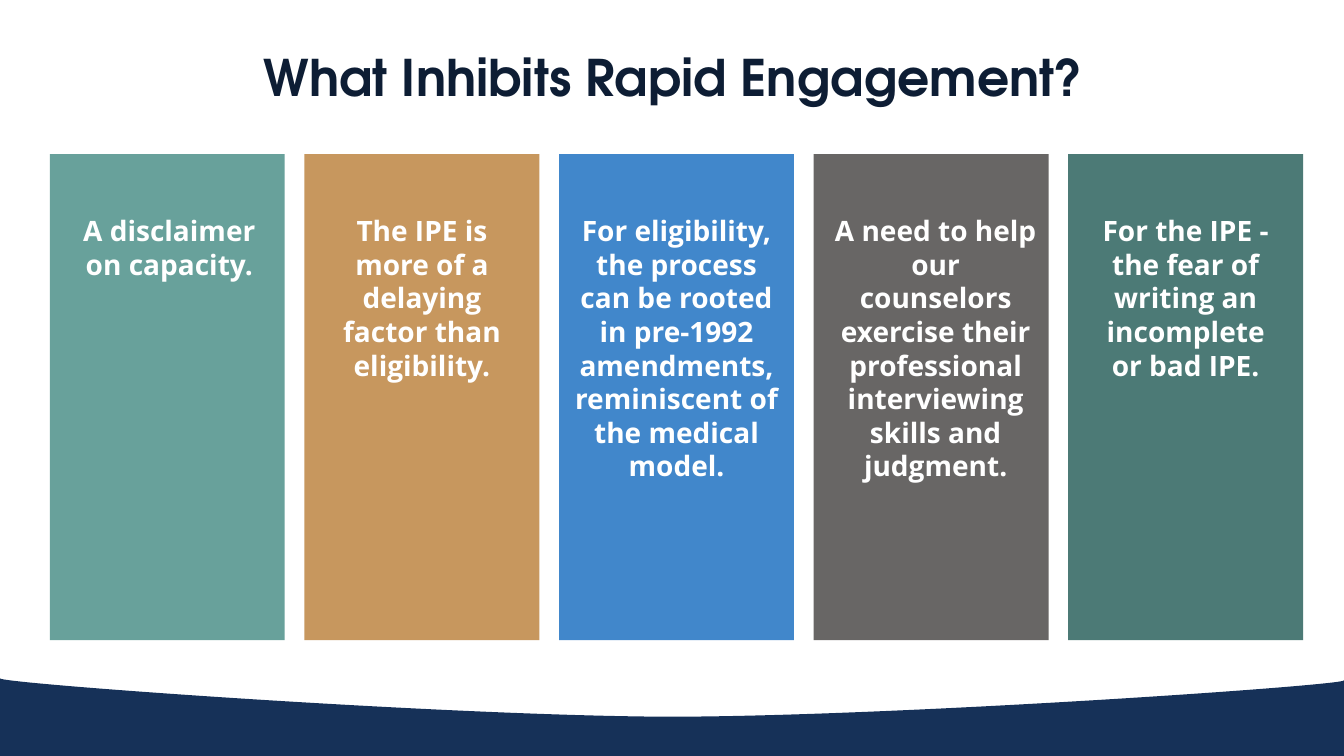
import pptx
import pptx.util
import pptx.dml.color
import pptx.enum.shapes
import pptx.enum.text
import pptx.oxml.ns
from lxml import etree

Inches = pptx.util.Inches
qn = pptx.oxml.ns.qn

COLORS = {
    "navy": "163158",
    "title": "0D1D34",
    "white": "FFFFFF",
    "sage": "68A19B",
    "tan": "C7975E",
    "blue": "4187CB",
    "gray": "686665",
    "teal": "4C7A76",
}

CARDS = [
    ("sage", "A disclaimer on capacity.", 0.61, 2.14, 0.77),
    ("tan", "The IPE is more of a delaying factor than eligibility.", 3.24, 1.89, 1.78),
    ("blue", "For eligibility, the process can be rooted in pre-1992 amendments, "
     "reminiscent of the medical model.", 5.6, 2.22, 2.79),
    ("gray", "A need to help our counselors exercise their professional "
     "interviewing skills and judgment.", 8.17, 2.22, 2.79),
    ("teal", "For the IPE - the fear of writing an incomplete or bad IPE.", 10.73, 2.06, 1.78),
]
CARD_WIDTH = 2.33
CARD_STEP = 10.1 / 4
CARDS_MIDDLE = 6.71

WAVE_START = (0, 6.73)
WAVE_SEGMENTS = [
    [(0, 6.78), (4.4, 7.1), (6.62, 7.11)],
    [(8.85, 7.11), (13.33, 6.8), (13.33, 6.75)],
    [(13.33, 7.43)],
    [(13.33, 7.48), (10.35, 7.52), (6.67, 7.52)],
    [(2.99, 7.52), (0, 7.48), (0, 7.43)],
]
WAVE_CENTER = (13.33 / 2, (6.73 + 7.52) / 2)


def color(name):
    return pptx.dml.color.RGBColor.from_string(COLORS[name])


def paint(shape, fill):
    shape.shadow.inherit = False
    shape.fill.solid()
    shape.fill.fore_color.rgb = color(fill)
    shape.line.fill.background()


def add_panel(page, left, top, width, height, fill):
    panel = page.shapes.add_shape(
        pptx.enum.shapes.MSO_SHAPE.RECTANGLE,
        Inches(left), Inches(top), Inches(width), Inches(height))
    paint(panel, fill)


def add_label(page, text, left, top, width, height, size, font, fill, spacing=None):
    box = page.shapes.add_textbox(Inches(left), Inches(top), Inches(width), Inches(height))
    box.text_frame.word_wrap = True
    box.text_frame.text = text
    para = box.text_frame.paragraphs[0]
    para.alignment = pptx.enum.text.PP_ALIGN.CENTER
    para.line_spacing = spacing
    span = para.runs[0]
    span.font.name = font
    span.font.size = pptx.util.Pt(size)
    span.font.bold = True
    span.font.color.rgb = color(fill)
    return box


def turn(point):
    center_x, center_y = WAVE_CENTER
    return Inches(center_x + center_y - point[1]), Inches(center_y + point[0] - center_x)


def add_wave(page):
    builder = page.shapes.build_freeform(*turn(WAVE_START))
    builder.add_line_segments([turn(segment[-1]) for segment in WAVE_SEGMENTS], close=True)
    wave = builder.convert_to_shape()
    lines = list(wave.element.iter(qn("a:lnTo")))
    for line, segment in zip(lines, WAVE_SEGMENTS):
        if len(segment) == 3:
            curve = etree.Element(qn("a:cubicBezTo"))
            for point in segment:
                x, y = turn(point)
                etree.SubElement(curve, qn("a:pt"), x=str(x - wave.left), y=str(y - wave.top))
            line.getparent().replace(line, curve)
    wave.rotation = 270
    paint(wave, "navy")


def main():
    deck = pptx.Presentation()
    deck.slide_width = Inches(13.33)
    deck.slide_height = Inches(7.5)
    page = deck.slides.add_slide(deck.slide_layouts[6])

    add_panel(page, 0, 7.43, 13.33, 0.07, "navy")
    add_wave(page)
    title = add_label(page, "What Inhibits Rapid Engagement?", 0.8, 0.41, 11.76, 0.69,
                      36, "TeX Gyre Adventor", "title", 1.02)
    title.text_frame.vertical_anchor = pptx.enum.text.MSO_ANCHOR.MIDDLE

    for index, (fill, text, left, width, height) in enumerate(CARDS):
        card_left = CARDS_MIDDLE - CARD_WIDTH / 2 + (index - 2) * CARD_STEP
        add_panel(page, card_left, 1.53, CARD_WIDTH, 4.82, fill)
        label = add_label(page, text, left, 2.07, width, height, 20, "Open Sans", "white")
        label.text_frame.auto_size = pptx.enum.text.MSO_AUTO_SIZE.SHAPE_TO_FIT_TEXT

    deck.save("out.pptx")


if __name__ == "__main__":
    main()
